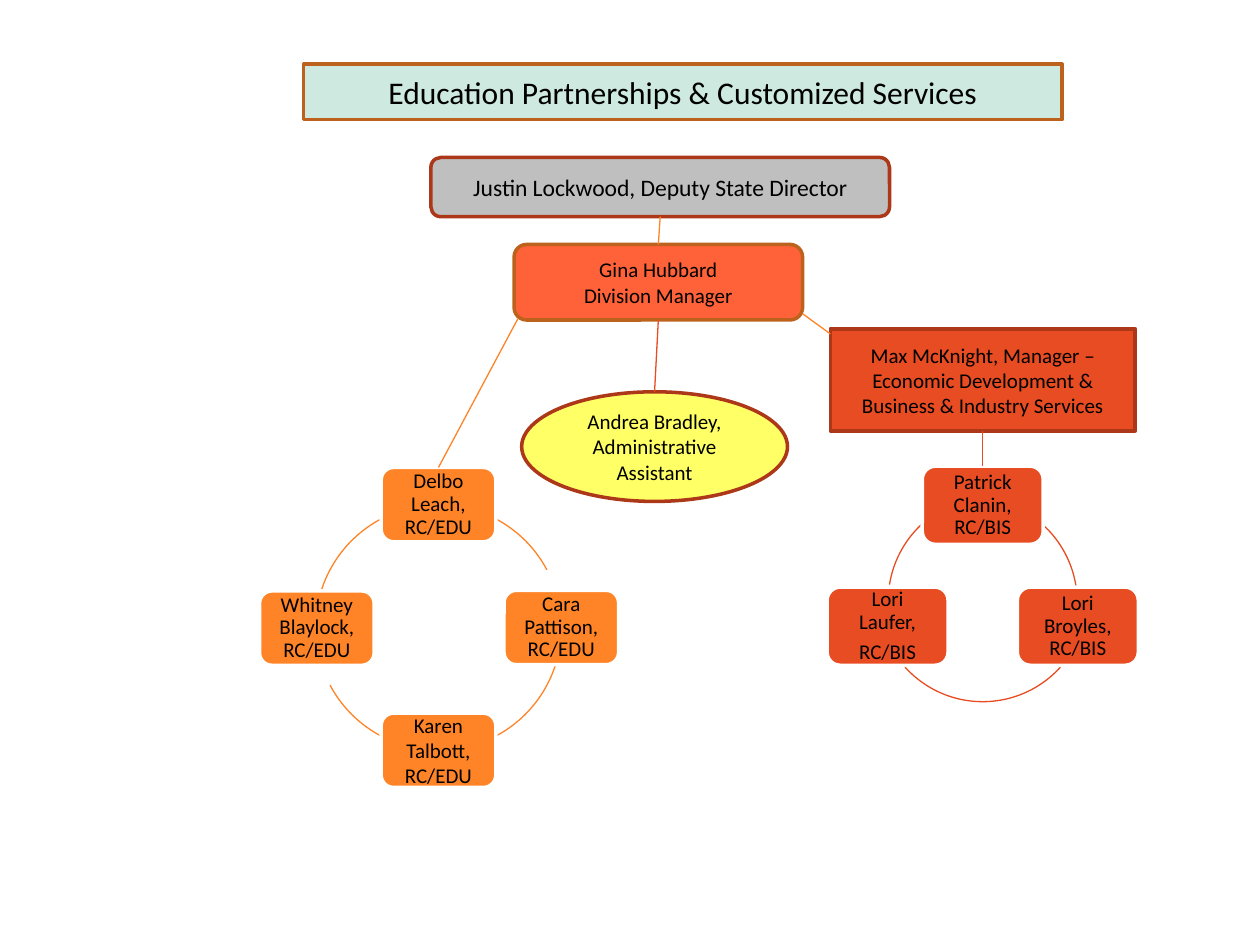
import pptx
import pptx.util
import pptx.dml.color
import pptx.enum.shapes
import pptx.enum.text
import lxml.etree

Inches, Pt = pptx.util.Inches, pptx.util.Pt
Shapes = pptx.enum.shapes.MSO_SHAPE

ORANGE, RED, RUST, BROWN = "FF8427", "E84C22", "AC3819", "BD621D"
TITLE = "Education Partnerships & Customized Services"

# name: (text, preset, left, top, width, height, fill, outline, size)
LEADERS = {
    "director": ("Justin Lockwood, Deputy State Director", Shapes.ROUNDED_RECTANGLE,
                 (3.42, 1.25, 3.64, 0.47), "BFBFBF", RUST, 13.5),
    "division": ("Gina Hubbard\nDivision Manager", Shapes.ROUNDED_RECTANGLE,
                 (4.08, 1.94, 2.29, 0.6), "FF6238", BROWN, 12),
    "assistant": ("Andrea Bradley, Administrative Assistant", Shapes.OVAL,
                  (4.14, 3.11, 2.11, 0.87), "FFFF66", RUST, 12),
    "development": ("Max McKnight, Manager – Economic Development & "
                    "Business & Industry Services", Shapes.RECTANGLE,
                    (6.59, 2.61, 2.42, 0.81), RED, RUST, 12),
}

# Members: text, offset from the ring's centre, line spacing
# Arcs: centre offset, start and end angle in degrees, clockwise from the right
RINGS = [
    {
        "color": ORANGE, "center": (3.48, 4.98), "radius": 0.975, "node": (0.91, 0.59),
        "members": [
            ("Delbo Leach, RC/EDU", (0, -0.975), 0.9),
            ("Cara Pattison, RC/EDU", (0.975, 0), 0.9),
            ("Karen Talbott, RC/EDU", (0, 0.975), 1.0),
            ("Whitney Blaylock, RC/EDU", (-0.965, 0.005), 0.9),
        ],
        "arcs": [((0, 0), 18 + turn, 62 + turn) for turn in (0, 90, 180, 280 - 10)],
    },
    {
        "color": RED, "center": (7.8, 4.76), "radius": 0.83, "node": (0.96, 0.62),
        "members": [
            ("Patrick Clanin, RC/BIS", (0, -0.75), 0.9),
            ("Lori Broyles, RC/BIS", (0.755, 0.21), 0.9),
            ("Lori Laufer,\nRC/BIS", (-0.755, 0.21), 0.9),
        ],
        "arcs": [((-0.08, 0.02), 312, 351), ((0, -0.02), 42, 138), ((0.08, 0.01), 189, 228)],
    },
]


def rgb(value):
    return pptx.dml.color.RGBColor.from_string(value)


def style(shape, fill, outline, width=2):
    shape.shadow.inherit = False
    if fill:
        shape.fill.solid()
        shape.fill.fore_color.rgb = rgb(fill)
    else:
        shape.fill.background()
    shape.line.color.rgb = rgb(outline)
    shape.line.width = Pt(width)


def write(shape, text, size, spacing=None, gap=0):
    frame = shape.text_frame
    frame.text = text
    frame.word_wrap = True
    frame.vertical_anchor = pptx.enum.text.MSO_ANCHOR.MIDDLE
    for paragraph in frame.paragraphs:
        paragraph.alignment = pptx.enum.text.PP_ALIGN.CENTER
        paragraph.line_spacing = spacing
        paragraph.space_after = Pt(gap)
        paragraph.font.size = Pt(size)
        paragraph.font.name = "Calibri"
        paragraph.font.color.rgb = rgb("000000")


def add_shape(slide, preset, box):
    return slide.shapes.add_shape(preset, *map(Inches, box))


def add_ring(slide, ring):
    """Draw the arcs and members of a ring; return the top member."""
    center_x, center_y = ring["center"]
    radius = ring["radius"]
    for (shift_x, shift_y), start, end in ring["arcs"]:
        arc = add_shape(slide, Shapes.ARC, (center_x + shift_x - radius,
                                            center_y + shift_y - radius,
                                            2 * radius, 2 * radius))
        style(arc, None, ring["color"], 0.75)
        # Arc angles are stored in 60000ths of a degree, scaled here by 100000
        arc.adjustments[0], arc.adjustments[1] = start * 0.6, end * 0.6

    width, height = ring["node"]
    nodes = []
    for text, (shift_x, shift_y), spacing in ring["members"]:
        node = add_shape(slide, Shapes.ROUNDED_RECTANGLE,
                         (center_x + shift_x - width / 2, center_y + shift_y - height / 2,
                          width, height))
        style(node, ring["color"], "FFFFFF")
        write(node, text, 12, spacing, gap=4.2)
        frame = node.text_frame
        frame.margin_left = frame.margin_right = Inches(0.08)
        frame.margin_top = frame.margin_bottom = Inches(0.08)
        nodes.append(node)
    return nodes[0]


def add_line(slide, start, end, color):
    """Join two ends, each a point or a (shape, side) pair."""
    connector = slide.shapes.add_connector(pptx.enum.shapes.MSO_CONNECTOR.STRAIGHT, 0, 0, 0, 0)
    if isinstance(start[0], float):
        connector.begin_x, connector.begin_y = map(Inches, start)
    else:
        connector.begin_connect(*start)
    if isinstance(end[0], float):
        connector.end_x, connector.end_y = map(Inches, end)
    else:
        connector.end_connect(*end)
    connector.line.color.rgb = rgb(color)
    connector.line.width = Pt(0.75)
    properties = connector.line._get_or_add_ln().getparent()
    lxml.etree.SubElement(properties, pptx.oxml.ns.qn("a:effectLst"))


def main():
    presentation = pptx.Presentation()
    presentation.slide_width, presentation.slide_height = Inches(10), Inches(7.5)
    slide = presentation.slides.add_slide(presentation.slide_layouts[5])

    # Title banner
    title = slide.shapes.title
    title.left, title.top, title.width, title.height = map(Inches, (2.41, 0.51, 6.02, 0.44))
    title.fill.solid()
    title.fill.fore_color.rgb = rgb("CEE9E0")
    title.line.color.rgb = rgb(BROWN)
    title.line.width = Pt(2)
    write(title, TITLE, 18)

    # Leaders
    leaders = {}
    for name, (text, preset, box, fill, outline, size) in LEADERS.items():
        leaders[name] = add_shape(slide, preset, box)
        style(leaders[name], fill, outline)
        write(leaders[name], text, size)

    # Teams
    education_top, business_top = [add_ring(slide, ring) for ring in RINGS]

    # Reporting lines
    top, bottom = 0, 2
    for start, end, color in [
        ((leaders["director"], bottom), (leaders["division"], top), ORANGE),
        ((leaders["division"], bottom), (leaders["assistant"], top), RED),
        ((leaders["development"], bottom), (business_top, top), RED),
        ((4.11, 2.53), (education_top, top), ORANGE),
        ((6.37, 2.49), (6.59, 2.65), ORANGE),
    ]:
        add_line(slide, start, end, color)

    presentation.save("out.pptx")


if __name__ == "__main__":
    main()
